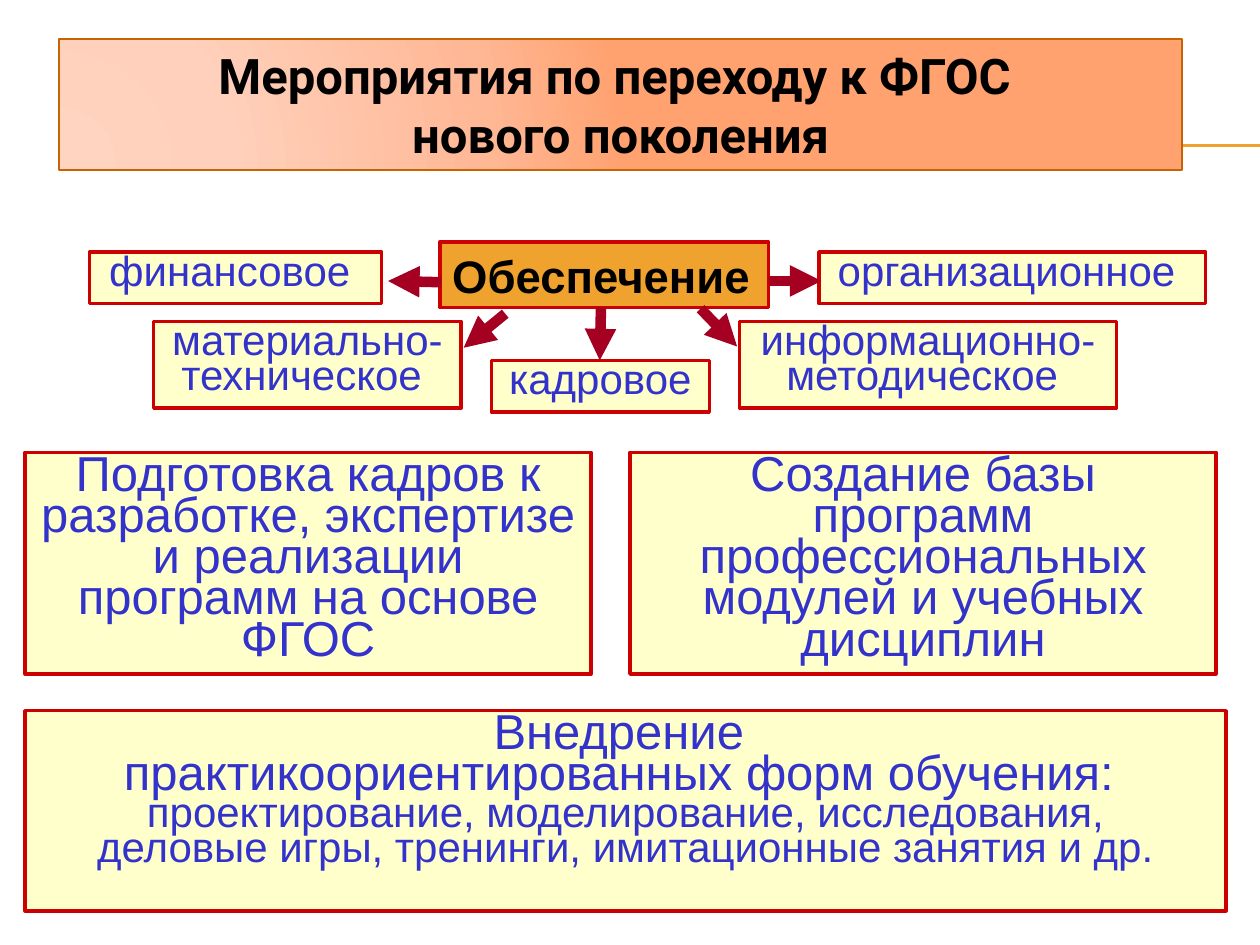
from dataclasses import dataclass

from lxml import etree
from pptx import Presentation, util as u
from pptx.dml.color import RGBColor
from pptx.enum import shapes, text
from pptx.oxml import parse_xml
from pptx.oxml.ns import nsdecls, qn


@dataclass(frozen=True)
class Theme:
    """Colours, fonts and type sizes of the slide."""
    font: str = "Arial"
    head: str = "Roboto"
    ink: str = "3333CC"
    dark: str = "000000"
    cream: str = "FFFFCC"
    gold: str = "F0A22E"
    edge: str = "CC0000"
    arrow: str = "A50021"
    rim: str = "C66403"
    glow: tuple = ((0, "FFD4C1"), (30, "FFD0BB"), (75, "FFB896"), (100, "FFA270"))
    big: int = 28
    mid: int = 26
    small: int = 24


T = Theme()
COLS, ROWS = 100, 75
CELL = u.Inches(0.1)

SUPPORT = (
    ("финансовое ", (7.1, 20, 23.2, 4.1)),
    ("организационное ", (65, 20, 30.7, 4.1)),
    ("материально-техническое ", (12.2, 25.5, 24.4, 6.9)),
    ("информационно-методическое ", (58.7, 25.5, 29.9, 6.9)),
    ("кадровое ", (39, 28.6, 17.3, 4.1)),
)
TASKS = (
    ("Подготовка кадров к разработке, экспертизе и реализации программ на основе ФГОС",
     (2, 35.9, 44.9, 17.6)),
    ("Создание базы программ профессиональных модулей и учебных дисциплин",
     (50, 35.9, 46.5, 17.6)),
)
FORMS = (
    ("Внедрение ", T.big),
    ("практикоориентированных форм обучения: ", T.big),
    ("проектирование, моделирование, исследования,", T.small),
    ("деловые игры, тренинги, имитационные занятия и др.", T.small),
)
ARROWS = (
    (61, 22.3, 65.2, 22.3),
    (35, 22.4, 30.8, 22.3),
    (47.7, 24.4, 47.6, 28.6),
    (40.1, 24.9, 36.8, 27.6),
    (55.6, 24.5, 58.5, 27.5),
)


def grid(*cells):
    """Turn counts of grid cells into lengths."""
    return [round(n * CELL) for n in cells]


def rgb(code):
    """Give the colour for a hex code."""
    return RGBColor.from_string(code)


def style(par, size, font=T.font, color=T.ink, bold=False):
    """Format every run of a paragraph."""
    for run in par.runs:
        run.font.name = font
        run.font.size = u.Pt(size)
        run.font.bold = bold
        run.font.color.rgb = rgb(color)


def frame(shape, wrap=True):
    """Set how a shape holds its text and return the text frame."""
    body = shape.text_frame
    body.word_wrap = wrap
    body.auto_size = text.MSO_AUTO_SIZE.SHAPE_TO_FIT_TEXT
    body.vertical_anchor = text.MSO_ANCHOR.TOP
    return body


def box(slide, spot, fill=T.cream):
    """Draw a red-edged rectangle."""
    shape = slide.shapes.add_shape(shapes.MSO_SHAPE.RECTANGLE, *grid(*spot))
    shape.shadow.inherit = False
    shape.fill.solid()
    shape.fill.fore_color.rgb = rgb(fill)
    shape.line.color.rgb = rgb(T.edge)
    shape.line.width = u.Pt(2)
    return shape


def panel(slide, spot, rows):
    """Draw a cream box with tight centred lines of (words, size)."""
    body = frame(box(slide, spot))
    body.text = "\n".join(words for words, _ in rows)
    for par, (_, size) in zip(body.paragraphs, rows):
        par.alignment = text.PP_ALIGN.CENTER
        par.line_spacing = 0.7
        style(par, size)


def hub(slide, spot, words):
    """Draw the gold box that the arrows leave from."""
    body = frame(box(slide, spot, T.gold), wrap=False)
    body.text = words
    body.paragraphs[0].alignment = text.PP_ALIGN.LEFT
    style(body.paragraphs[0], T.mid, color=T.dark, bold=True)


def line(slide, ends, color, width, head=False):
    """Draw a straight line, with an arrowhead if asked."""
    link = slide.shapes.add_connector(shapes.MSO_CONNECTOR.STRAIGHT, *grid(*ends))
    link.line.color.rgb = rgb(color)
    link.line.width = u.Pt(width)
    if head:
        etree.SubElement(link.line._get_or_add_ln(), qn("a:tailEnd"), type="triangle")
    etree.SubElement(link._element.spPr, qn("a:effectLst"))


def glow(shape):
    """Fill a shape with the round peach gradient."""
    stops = "".join(
        f'<a:gs pos="{pos * 1000}"><a:srgbClr val="{code}"/></a:gs>'
        for pos, code in T.glow)
    shape.fill.solid()
    old = shape._element.spPr.find(qn("a:solidFill"))
    new = parse_xml(
        f'<a:gradFill {nsdecls("a")} rotWithShape="1"><a:gsLst>{stops}</a:gsLst>'
        '<a:path path="circle">'
        '<a:fillToRect l="5000" t="100000" r="120000" b="10000"/>'
        '</a:path></a:gradFill>')
    old.getparent().replace(old, new)


def title(slide, spot, words):
    """Place the title banner in front of the rule."""
    bar = slide.shapes.title
    bar.left, bar.top, bar.width, bar.height = grid(*spot)
    glow(bar)
    bar.line.color.rgb = rgb(T.rim)
    bar.line.width = u.Pt(1)
    body = frame(bar)
    body.text = words
    for par in body.paragraphs:
        par.alignment = text.PP_ALIGN.CENTER
        style(par, T.big, T.head, T.dark, True)
    slide.shapes._spTree.append(bar._element)


def main():
    """Build the slide and save it."""
    deck = Presentation()
    deck.slide_width, deck.slide_height = grid(COLS, ROWS)
    slide = deck.slides.add_slide(deck.slide_layouts[5])
    for row in (11.5, 11.6):
        line(slide, (5.6, row, COLS, row), T.gold, 0.75)
    panel(slide, (2, 56.4, 95.3, 15.9), FORMS)
    for rows, size in ((TASKS, T.big), (SUPPORT, T.small)):
        for words, spot in rows:
            panel(slide, spot, [(words, size)])
    hub(slide, (34.9, 19.2, 26.1, 5.2), "Обеспечение")
    for ends in ARROWS:
        line(slide, ends, T.arrow, 6, head=True)
    title(slide, (4.7, 3.1, 89.1, 10.4),
          "Мероприятия по переходу к ФГОС \nнового поколения")
    deck.save("out.pptx")


if __name__ == "__main__":
    main()
